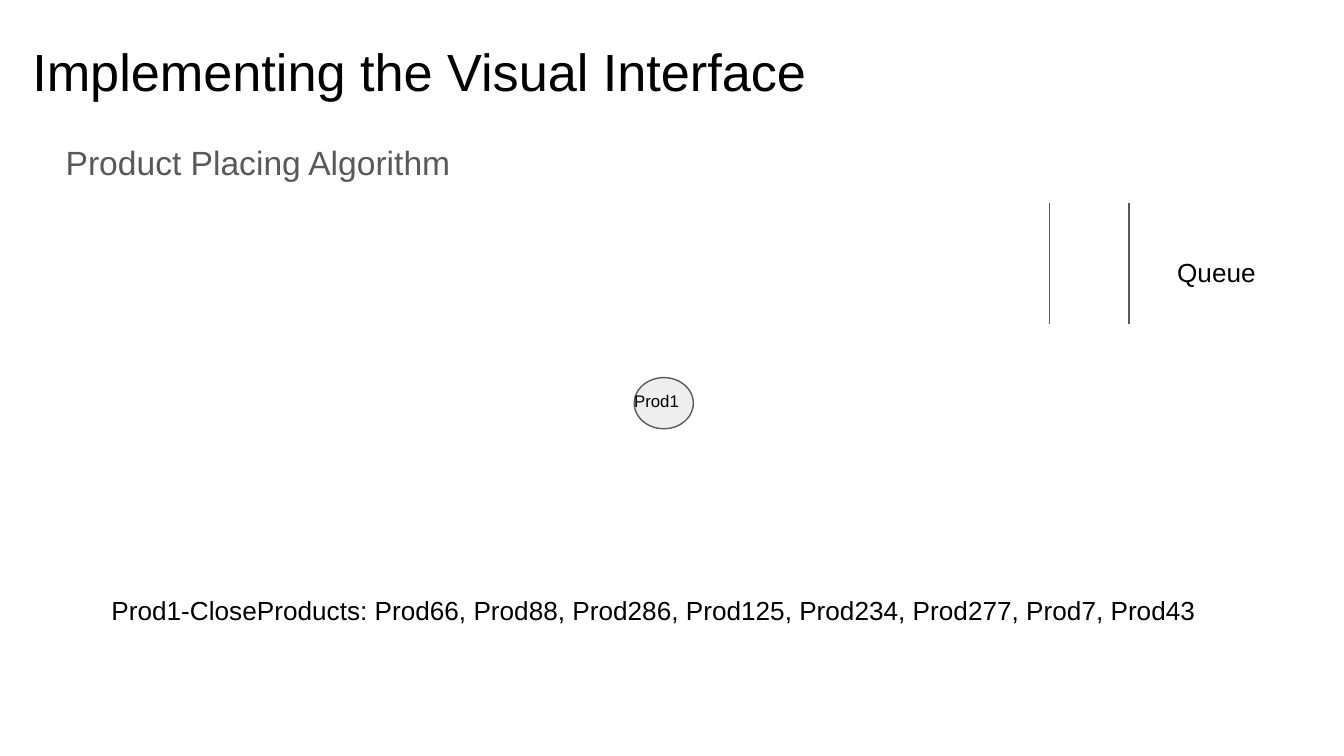
from lxml import etree
from pptx import Presentation
from pptx.dml.color import RGBColor
from pptx.enum.shapes import MSO_CONNECTOR, MSO_SHAPE
from pptx.enum.text import MSO_ANCHOR, MSO_AUTO_SIZE, PP_ALIGN
from pptx.oxml.ns import qn
from pptx.util import Pt

STRAIGHT = MSO_CONNECTOR.STRAIGHT
OVAL = MSO_SHAPE.OVAL
TOP = MSO_ANCHOR.TOP
LEFT = PP_ALIGN.LEFT
NO_AUTOFIT = MSO_AUTO_SIZE.NONE

COLORS = {"text": "000000", "muted": "595959", "node": "EEEEEE"}
FONT = "Arial"
INSET = 7.2
TITLE_ONLY = 5


def color(name):
    return RGBColor.from_string(COLORS[name])


def write(shape, text, size=14, fill="text", top_inset=INSET,
          indent=0, line_spacing=1.0, space_after=0):
    frame = shape.text_frame
    frame.text = text
    frame.word_wrap = True
    frame.auto_size = NO_AUTOFIT
    frame.vertical_anchor = TOP
    frame.margin_left = frame.margin_right = frame.margin_bottom = Pt(INSET)
    frame.margin_top = Pt(top_inset)
    paragraph = frame.paragraphs[0]
    if indent:
        properties = paragraph._p.get_or_add_pPr()
        properties.set("marL", "0")
        properties.set("indent", str(Pt(indent)))
    paragraph.alignment = LEFT
    paragraph.line_spacing = line_spacing
    paragraph.space_after = Pt(space_after)
    font = paragraph.runs[0].font
    font.name, font.size = FONT, Pt(size)
    font.color.rgb = color(fill)


def add_label(slide, text, left, top, width, height, **text_format):
    label = slide.shapes.add_textbox(Pt(left), Pt(top), Pt(width), Pt(height))
    write(label, text, **text_format)


def add_heading(slide, left, top):
    title = slide.shapes.title
    title.left, title.top = Pt(left), Pt(top)
    title.width, title.height = Pt(430), Pt(45.5)
    write(title, "Implementing the Visual Interface", size=28, top_inset=10)
    add_label(slide, "Product Placing Algorithm", left, top + 54.7, 267, 45.5,
              size=18, fill="muted", indent=18, line_spacing=1.15, space_after=16)


def add_product(slide, text, left, top, width, height):
    node = slide.shapes.add_shape(OVAL, Pt(left), Pt(top), Pt(width), Pt(height))
    node.shadow.inherit = False
    node.fill.solid()
    node.fill.fore_color.rgb = color("node")
    node.line.color.rgb = color("muted")
    node.line.width = Pt(0.75)
    add_label(slide, text, left - 7.2, top, width + 13, height, size=9)


def add_queue(slide, left, top, width, height):
    """Two upright walls, open at both ends, with the name at their right."""
    for x in (left, left + width):
        wall = slide.shapes.add_connector(STRAIGHT, Pt(x), Pt(top), Pt(x), Pt(top + height))
        wall.line.color.rgb = color("muted")
        wall.line.width = Pt(0.75)
        etree.SubElement(wall._element.spPr, qn("a:effectLst"))
    add_label(slide, "Queue", left + width + 18.7, top + 21.6, 63.4, 27.4)


def main():
    deck = Presentation()
    deck.slide_width, deck.slide_height = Pt(720), Pt(405)
    slide = deck.slides.add_slide(deck.slide_layouts[TITLE_ONLY])
    add_heading(slide, 10.1, 10.8)
    add_product(slide, "Prod1", 339.8, 202.3, 31.7, 27.4)
    add_queue(slide, 562.3, 108.7, 42.5, 64.8)
    add_label(slide, "Prod1-CloseProducts: Prod66, Prod88, Prod286, Prod125, "
              "Prod234, Prod277, Prod7, Prod43", 52.6, 311, 605.5, 38.9)
    deck.save("out.pptx")


if __name__ == "__main__":
    main()
